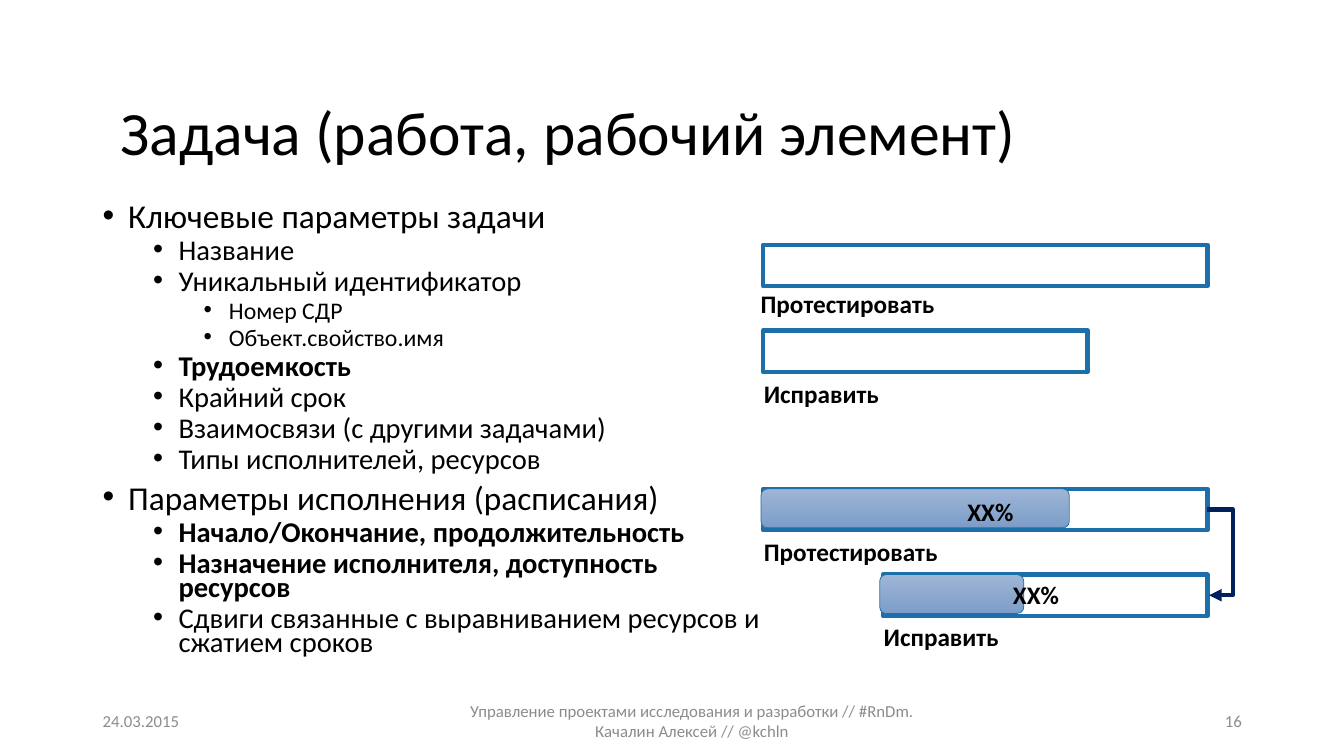
"""Build a slide about the parameters of a project task."""
from lxml import etree
from pptx import Presentation
from pptx import util as u
from pptx.dml.color import RGBColor
from pptx.enum import shapes, text
from pptx.oxml.ns import qn

FONT = "Calibri"
BLACK, WHITE, GREY, BLUE, NAVY = "000000", "FFFFFF", "8C8C8C", "1D6FA9", "002060"
GRADIENT = ("9EB5D6", "7D9DC8")
LEFT, CENTER, RIGHT = text.PP_ALIGN.LEFT, text.PP_ALIGN.CENTER, text.PP_ALIGN.RIGHT

TITLE = "Задача (работа, рабочий элемент)"
BULLETS = [
    (0, "Ключевые параметры задачи", False),
    (1, "Название", False),
    (1, "Уникальный идентификатор", False),
    (2, "Номер СДР", False),
    (2, "Объект.свойство.имя", False),
    (1, "Трудоемкость", True),
    (1, "Крайний срок", False),
    (1, "Взаимосвязи (с другими задачами)", False),
    (1, "Типы исполнителей, ресурсов", False),
    (0, "Параметры исполнения (расписания)", False),
    (1, "Начало/Окончание, продолжительность", True),
    (1, "Назначение исполнителя, доступность ресурсов", True),
    (1, "Сдвиги связанные с выравниванием ресурсов и сжатием сроков", False),
]
LEVEL_SIZES = (23.8, 20.4, 17)
FOOTERS = [
    ("24.03.2015", 2.34, 7.62, LEFT),
    ("Управление проектами исследования и разработки // #RnDm. Качалин Алексей // @kchln",
     11.23, 12.42, CENTER),
    ("16", 23.93, 7.62, RIGHT),
]
BAR_HEIGHT, ROW_PITCH = 1.04, 2.16
LONG, SHORT = 11.2, 8.18
PLAN_TOP, SCHEDULE_TOP = 6.17, 12.32
BAR_LEFT = 19.23
BAR_RIGHT = BAR_LEFT + LONG
BARS = [
    (BAR_LEFT, PLAN_TOP, LONG),
    (BAR_LEFT, PLAN_TOP + ROW_PITCH, SHORT),
    (BAR_LEFT, SCHEDULE_TOP, LONG),
    (BAR_RIGHT - SHORT, SCHEDULE_TOP + ROW_PITCH, SHORT),
]
PROGRESS = [(19.18, SCHEDULE_TOP, 7.77), (22.17, SCHEDULE_TOP + ROW_PITCH, 3.63)]
LABELS = [
    ("Протестировать", 18.92, 7.14, 4.93, LEFT),
    ("Исправить", 19, 9.4, 3.61, LEFT),
    ("Протестировать", 19, 13.39, 4.93, LEFT),
    ("Исправить", 22.02, 15.54, 3.61, LEFT),
    ("XX%", 24.13, 12.37, 1.68, LEFT),
    ("XX%", 25.27, 14.48, 1.68, CENTER),
]
LINK_WIDTH, LINK_REACH = 0.04, 0.64


def color(value):
    return RGBColor.from_string(value)


def style(para, size, value=BLACK, bold=False, align=LEFT):
    para.alignment = align
    para.font.name, para.font.size, para.font.bold = FONT, u.Pt(size), bold
    para.font.color.rgb = color(value)


def add_box(page, place, wrap=True, anchor=text.MSO_ANCHOR.TOP):
    frame = page.shapes.add_textbox(*map(u.Cm, place)).text_frame
    frame.word_wrap, frame.vertical_anchor = wrap, anchor
    return frame


def add_line(page, words, place, size, value=BLACK, bold=False, align=LEFT,
             wrap=True, anchor=text.MSO_ANCHOR.TOP):
    para = add_box(page, place, wrap, anchor).paragraphs[0]
    para.text = words
    style(para, size, value, bold, align)
    return para


def add_bullets(page):
    frame = add_box(page, (2.34, 5.08, 17.22, 12.09))
    for index, (level, words, bold) in enumerate(BULLETS):
        para = frame.add_paragraph() if index else frame.paragraphs[0]
        para.text, para.level, para.line_spacing = words, level, 0.7
        para.space_before = u.Pt((5 if level else 10) if index else 0)
        props = para._p.get_or_add_pPr()
        props.set("marL", str(u.Cm(0.64 + 1.27 * level)))
        props.set("indent", str(u.Cm(-0.64)))
        etree.SubElement(props, qn("a:buFont"), typeface="Arial")
        etree.SubElement(props, qn("a:buChar"), char="•")
        style(para, LEVEL_SIZES[level], bold=bold)


def add_bar(page, kind, left, top, width, height, line_width):
    bar = page.shapes.add_shape(kind, *map(u.Cm, (left, top, width, height)))
    bar.shadow.inherit = False
    bar.line.color.rgb, bar.line.width = color(BLUE), u.Pt(line_width)
    return bar


def add_link(page):
    start = SCHEDULE_TOP + BAR_HEIGHT / 2
    link = page.shapes.add_connector(
        shapes.MSO_CONNECTOR.ELBOW,
        *map(u.Cm, (BAR_RIGHT, start, BAR_RIGHT + LINK_WIDTH, start + ROW_PITCH)))
    link.line.color.rgb, link.line.width = color(NAVY), u.Pt(3)
    props = link._element.spPr
    guides = props.find(qn("a:prstGeom")).find(qn("a:avLst"))
    bend = round(LINK_REACH / LINK_WIDTH * 100000)
    etree.SubElement(guides, qn("a:gd"), name="adj1", fmla=f"val {bend}")
    etree.SubElement(props.find(qn("a:ln")), qn("a:tailEnd"), type="triangle")
    etree.SubElement(props, qn("a:effectLst"))


def main():
    deck = Presentation()
    deck.slide_width, deck.slide_height = u.Cm(33.87), u.Cm(19.05)
    page = deck.slides.add_slide(deck.slide_layouts[6])
    middle = text.MSO_ANCHOR.MIDDLE

    title = add_line(page, TITLE, (2.79, 2.13, 28.73, 2.57), 44, anchor=middle)
    title.line_spacing = 0.9
    add_bullets(page)
    for words, left, width, align in FOOTERS:
        add_line(page, words, (left, 17.65, width, 1.02), 12, GREY,
                 align=align, anchor=middle)

    for place in BARS:
        bar = add_bar(page, shapes.MSO_SHAPE.RECTANGLE, *place, BAR_HEIGHT, 3)
        bar.fill.solid()
        bar.fill.fore_color.rgb = color(WHITE)
    for place in PROGRESS:
        bar = add_bar(page, shapes.MSO_SHAPE.ROUNDED_RECTANGLE, *place, 0.98, 0.5)
        bar.fill.gradient()
        bar.fill.gradient_angle = 270
        for stop, value in zip(bar.fill.gradient_stops, GRADIENT):
            stop.color.rgb = color(value)
    for words, left, top, width, align in LABELS:
        add_line(page, words, (left, top, width, 1.02), 18, bold=True,
                 align=align, wrap=False)
    add_link(page)
    deck.save("out.pptx")


if __name__ == "__main__":
    main()
